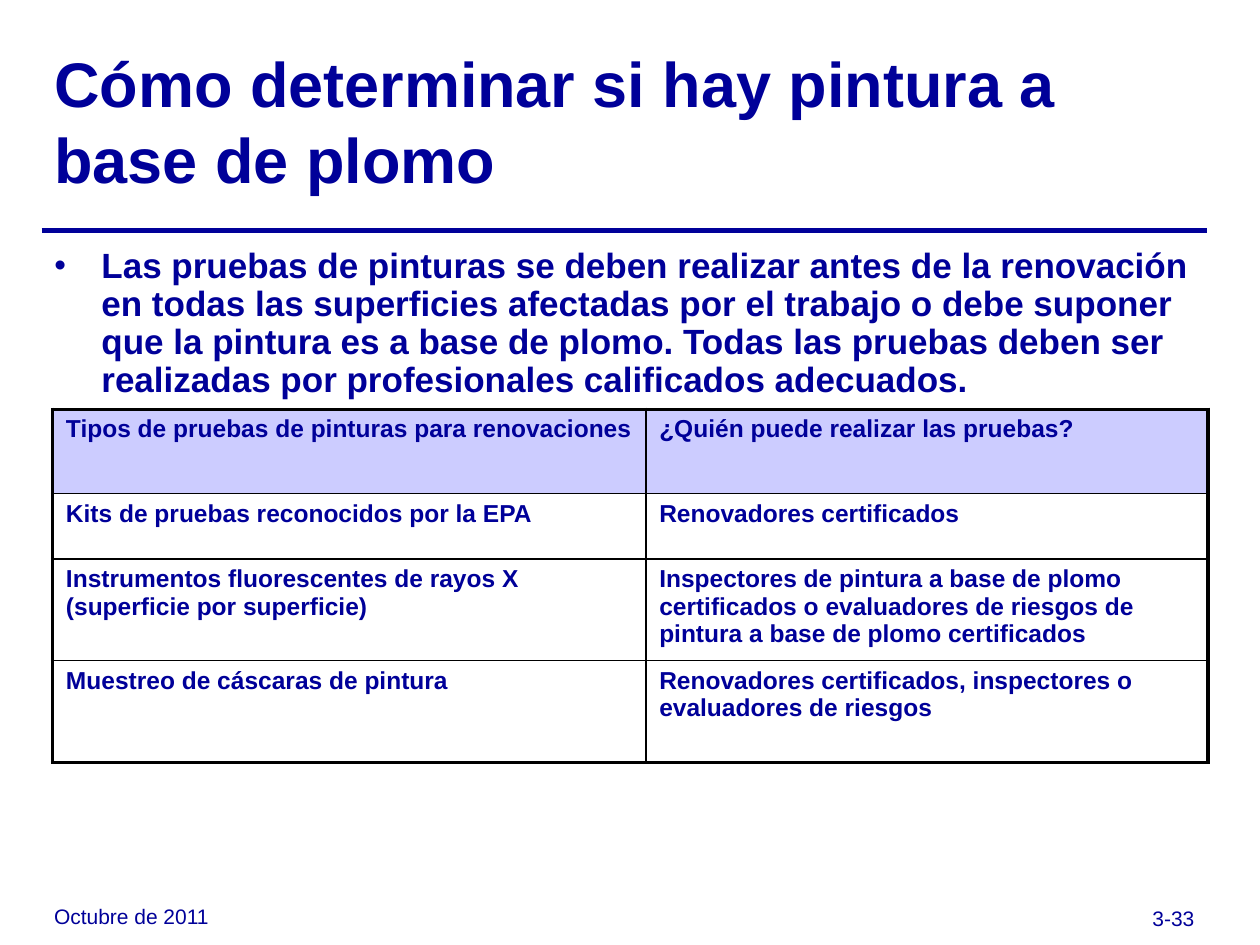
from lxml.etree import SubElement
from pptx import Presentation
from pptx.dml.color import RGBColor
from pptx.enum.shapes import MSO_CONNECTOR
from pptx.enum.text import MSO_ANCHOR, MSO_AUTO_SIZE, PP_ALIGN
from pptx.oxml.ns import qn
from pptx.util import Cm, Pt

# Content
TITLE = "Cómo determinar si hay pintura a base de plomo"
BODY = (
    "Las pruebas de pinturas se deben realizar antes de la renovación en todas "
    "las superficies afectadas por el trabajo o debe suponer que la pintura es "
    "a base de plomo. Todas las pruebas deben ser realizadas por profesionales "
    "calificados adecuados."
)
TEST_ROWS = [
    ("Tipos de pruebas de pinturas para renovaciones",
     "¿Quién puede realizar las pruebas?"),
    ("Kits de pruebas reconocidos por la EPA", "Renovadores certificados"),
    ("Instrumentos fluorescentes de rayos X (superficie por superficie)",
     "Inspectores de pintura a base de plomo certificados o evaluadores de "
     "riesgos de pintura a base de plomo certificados"),
    ("Muestreo de cáscaras de pintura",
     "Renovadores certificados, inspectores o evaluadores de riesgos"),
]
FOOTERS = [  # text, left, alignment, line spacing
    ("Octubre de 2011", 0.84, PP_ALIGN.LEFT, 1.6),
    ("3-33", 19.05, PP_ALIGN.RIGHT, 1.7),
]

# Layout in centimetres
LEFT, WIDTH = 0.84, 23.5
COLUMN_WIDTHS = [11.96, 11.33]
ROW_HEIGHTS = [1.7, 1.32, 2.05, 2.05]
NAVY, LAVENDER, BLACK, WHITE = "000099", "CCCCFF", "000000", "FFFFFF"


def color(hex_value):
    return RGBColor.from_string(hex_value)


def write_text(frame, text, size, bold=False, align=PP_ALIGN.LEFT,
               anchor=MSO_ANCHOR.TOP, line_spacing=None, bullet=None):
    frame.word_wrap = True
    frame.auto_size = MSO_AUTO_SIZE.NONE
    frame.vertical_anchor = anchor
    format_paragraph(frame.paragraphs[0], text, size, bold, align,
                     line_spacing, bullet)


def format_paragraph(paragraph, text, size, bold=False, align=PP_ALIGN.LEFT,
                     line_spacing=None, bullet=None):
    paragraph.text = text
    paragraph.alignment = align
    paragraph.space_before = Pt(0)
    if line_spacing:
        paragraph.line_spacing = line_spacing
    if bullet:
        properties = paragraph._p.get_or_add_pPr()
        properties.set("marL", str(Cm(0.95)))
        properties.set("indent", str(-Cm(0.95)))
        SubElement(properties, qn("a:buSzPct"), val="95000")
        SubElement(properties, qn("a:buFont"), typeface="Arial")
        SubElement(properties, qn("a:buChar"), char=bullet)
    font = paragraph.runs[0].font
    font.name, font.size, font.bold = "Arial", Pt(size), bold
    font.color.rgb = color(NAVY)


def place(shape, left, top, width, height):
    shape.left, shape.top = Cm(left), Cm(top)
    shape.width, shape.height = Cm(width), Cm(height)


def set_borders(cell, widths):
    properties = cell._tc.get_or_add_tcPr()
    for position, (side, width) in enumerate(widths.items()):
        line = properties.makeelement(qn(f"a:{side}"), {"w": str(Pt(width))})
        fill = SubElement(line, qn("a:solidFill"))
        SubElement(fill, qn("a:srgbClr"), val=BLACK)
        properties.insert(position, line)


def add_test_table(slide):
    row_count, column_count = len(TEST_ROWS), len(COLUMN_WIDTHS)
    table = slide.shapes.add_table(
        row_count, column_count, Cm(1.06), Cm(8.25),
        Cm(sum(COLUMN_WIDTHS)), Cm(sum(ROW_HEIGHTS))).table
    for column, width in zip(table.columns, COLUMN_WIDTHS):
        column.width = Cm(width)
    for row, height in zip(table.rows, ROW_HEIGHTS):
        row.height = Cm(height)
    for row_index, texts in enumerate(TEST_ROWS):
        for column_index, text in enumerate(texts):
            cell = table.cell(row_index, column_index)
            cell.margin_left = cell.margin_right = Cm(0.27)
            cell.margin_top = cell.margin_bottom = Cm(0.13)
            cell.fill.solid()
            cell.fill.fore_color.rgb = color(WHITE if row_index else LAVENDER)
            format_paragraph(cell.text_frame.paragraphs[0], text, 14, bold=True)
            # Thick outer frame, thin inner grid
            outer = {
                "lnL": column_index == 0,
                "lnR": column_index == column_count - 1,
                "lnT": row_index == 0,
                "lnB": row_index == row_count - 1,
            }
            set_borders(cell, {side: 2.25 if edge else 1
                               for side, edge in outer.items()})


def main():
    presentation = Presentation()
    presentation.slide_width, presentation.slide_height = Cm(25.4), Cm(19.05)
    slide = presentation.slides.add_slide(presentation.slide_layouts[1])

    # Rule under the title
    rule = slide.shapes.add_connector(
        MSO_CONNECTOR.STRAIGHT, Cm(LEFT), Cm(4.65), Cm(LEFT + WIDTH), Cm(4.65))
    rule.line.color.rgb = color(NAVY)
    rule.line.width = Pt(3)
    SubElement(rule._element.spPr, qn("a:effectLst"))

    # Title and bullet
    title, body = slide.placeholders
    place(title, LEFT, 0.84, WIDTH, 3.18)
    write_text(title.text_frame, TITLE, 36, bold=True, anchor=MSO_ANCHOR.MIDDLE)
    place(body, LEFT, 4.88, WIDTH, 2.74)
    write_text(body.text_frame, BODY, 20, bold=True, line_spacing=0.9, bullet="•")

    add_test_table(slide)

    # Date and page number
    for text, left, align, line_spacing in FOOTERS:
        box = slide.shapes.add_textbox(Cm(left), Cm(17.78), Cm(5.28), Cm(1.27))
        write_text(box.text_frame, text, 12, align=align, line_spacing=line_spacing)

    presentation.save("out.pptx")


if __name__ == "__main__":
    main()
